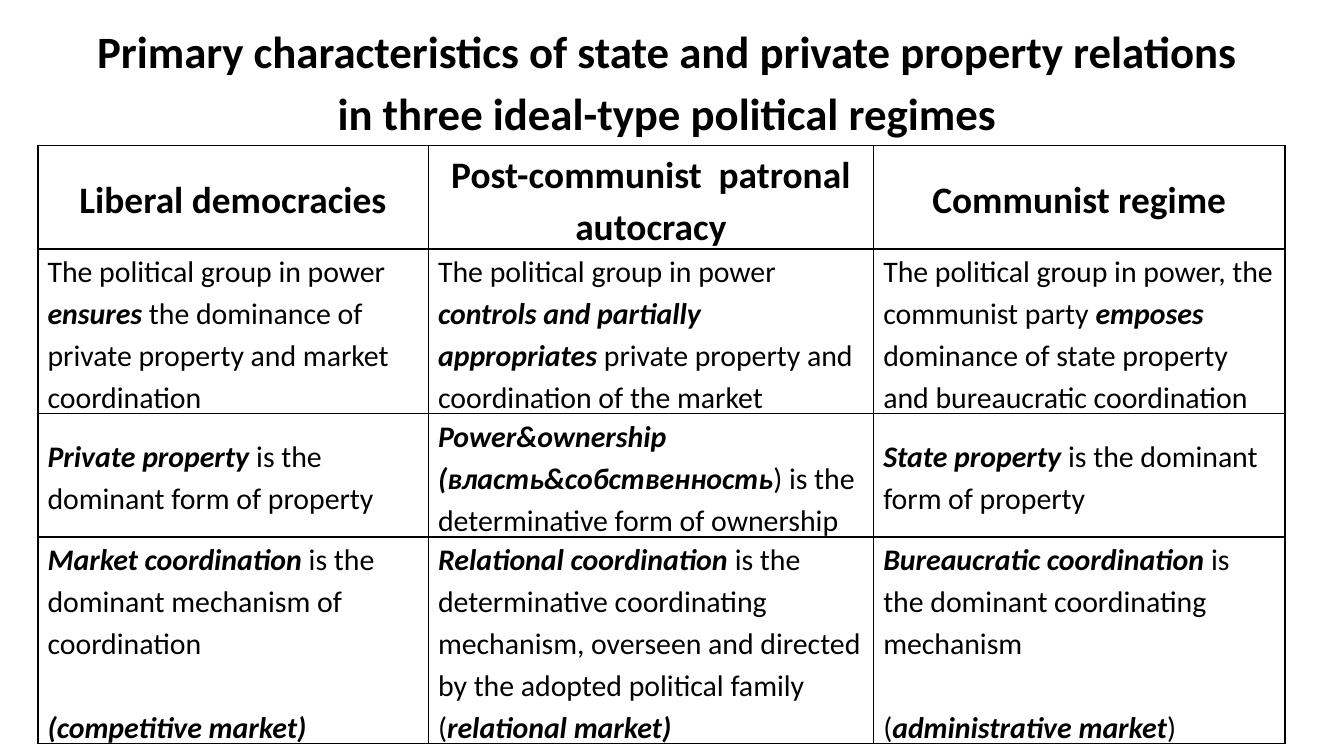
from dataclasses import dataclass

from lxml import etree
from pptx import Presentation
from pptx import util as u
from pptx.dml.color import RGBColor
from pptx.enum import text
from pptx.oxml import ns

PX = u.Inches(1) // 96  # 96 px to the inch


@dataclass(frozen=True)
class Theme:
    font: str = "Calibri"
    ink: str = "000000"
    title: int = 24
    header: int = 20
    body: int = 16
    line_spacing: float = 1.15
    gap: float = 22.4  # one body line, in points
    border: int = 1


TITLE = ("Primary characteristics of state and private property relations ",
         "in three ideal-type political regimes ")
COLUMNS = [279, 318, 294]
ROWS = [54, 113, 87, 109]
HEADERS = ["Liberal democracies", "Post-communist  patronal autocracy", "Communist regime"]
# Asterisks enclose emphasised words; each cell is a list of paragraphs.
BODY = [
    [["The political group in power *ensures* the dominance of private property "
      "and market coordination"],
     ["The political group in power *controls and partially appropriates* private property "
      "and coordination of the market"],
     ["The political group in power, the communist party *emposes *dominance of state property "
      "and bureaucratic coordination"]],
    [["*Private property *is the dominant form of property"],
     ["*Power&ownership (власть&собственность*) is the determinative form of ownership"],
     ["*State property *is the dominant form of property"]],
    [["*Market coordination* is the dominant mechanism of coordination",
      "*(competitive market)*"],
     ["*Relational coordination *is the determinative coordinating mechanism, "
      "overseen and directed by the adopted political family",
      "(*relational market)*"],
     ["*Bureaucratic coordination* is the dominant coordinating mechanism",
      "(*administrative market*)"]],
]
SPACED_COLUMNS = (0, 2)  # their market type stands one line apart


class SlideBuilder:
    def __init__(self, slide, theme):
        self.s = slide
        self.theme = theme

    def run(self, p, words, size, bold=False, italic=False):
        r = p.add_run()
        r.text = words
        f = r.font
        f.name, f.size, f.bold, f.italic = self.theme.font, u.Pt(size), bold, italic
        f.color.rgb = RGBColor.from_string(self.theme.ink)

    def paragraph(self, tf, first, align):
        p = tf.paragraphs[0] if first else tf.add_paragraph()
        p.alignment = align
        p.line_spacing = self.theme.line_spacing
        return p

    def title(self, lines, x, y, w, h):
        tf = self.s.shapes.add_textbox(x * PX, y * PX, w * PX, h * PX).text_frame
        tf.word_wrap = True
        tf.vertical_anchor = text.MSO_ANCHOR.MIDDLE
        p = self.paragraph(tf, True, text.PP_ALIGN.CENTER)
        for i, line in enumerate(lines):
            if i:
                p.add_line_break()
            self.run(p, line, self.theme.title, bold=True)

    def table(self, x, y, h, columns, rows):
        """Add an unfilled, bordered table; rows are least heights within h."""
        frame = self.s.shapes.add_table(
            len(rows), len(columns), x * PX, y * PX, sum(columns) * PX, h * PX)
        table = frame.table
        table.first_row = table.horz_banding = False
        for column, width in zip(table.columns, columns):
            column.width = width * PX
        for row, height in zip(table.rows, rows):
            row.height = height * PX
        frame.height = h * PX
        for cell in table.iter_cells():
            cell.fill.background()
            cell.vertical_anchor = text.MSO_ANCHOR.MIDDLE
            cell.margin_left = cell.margin_right = 7 * PX
            cell.margin_top = cell.margin_bottom = 0
            self.borders(cell)
        return table

    def borders(self, cell):
        props = cell._tc.get_or_add_tcPr()
        for i, side in enumerate("LRTB"):
            ln = etree.Element(ns.qn(f"a:ln{side}"), w=str(u.Pt(self.theme.border)))
            fill = etree.SubElement(ln, ns.qn("a:solidFill"))
            etree.SubElement(fill, ns.qn("a:srgbClr"), val=self.theme.ink)
            props.insert(i, ln)

    def header_cell(self, cell, words):
        p = self.paragraph(cell.text_frame, True, text.PP_ALIGN.CENTER)
        self.run(p, words, self.theme.header, bold=True)

    def body_cell(self, cell, paragraphs, spaced):
        for i, marked in enumerate(paragraphs):
            p = self.paragraph(cell.text_frame, i == 0, text.PP_ALIGN.LEFT)
            if i and spaced:
                p.space_before = u.Pt(self.theme.gap)
            for j, words in enumerate(marked.split("*")):
                if words:
                    strong = j % 2 == 1
                    self.run(p, words, self.theme.body, bold=strong, italic=strong)


def main():
    prs = Presentation()
    prs.slide_width, prs.slide_height = 960 * PX, 540 * PX
    slide = SlideBuilder(prs.slides.add_slide(prs.slide_layouts[6]), Theme())

    slide.title(TITLE, 48, 22, 864, 67)
    table = slide.table(27, 104, 427, COLUMNS, ROWS)
    for c, words in enumerate(HEADERS):
        slide.header_cell(table.cell(0, c), words)
    for r, row in enumerate(BODY, start=1):
        for c, paragraphs in enumerate(row):
            slide.body_cell(table.cell(r, c), paragraphs, c in SPACED_COLUMNS)

    prs.save("out.pptx")


if __name__ == "__main__":
    main()
